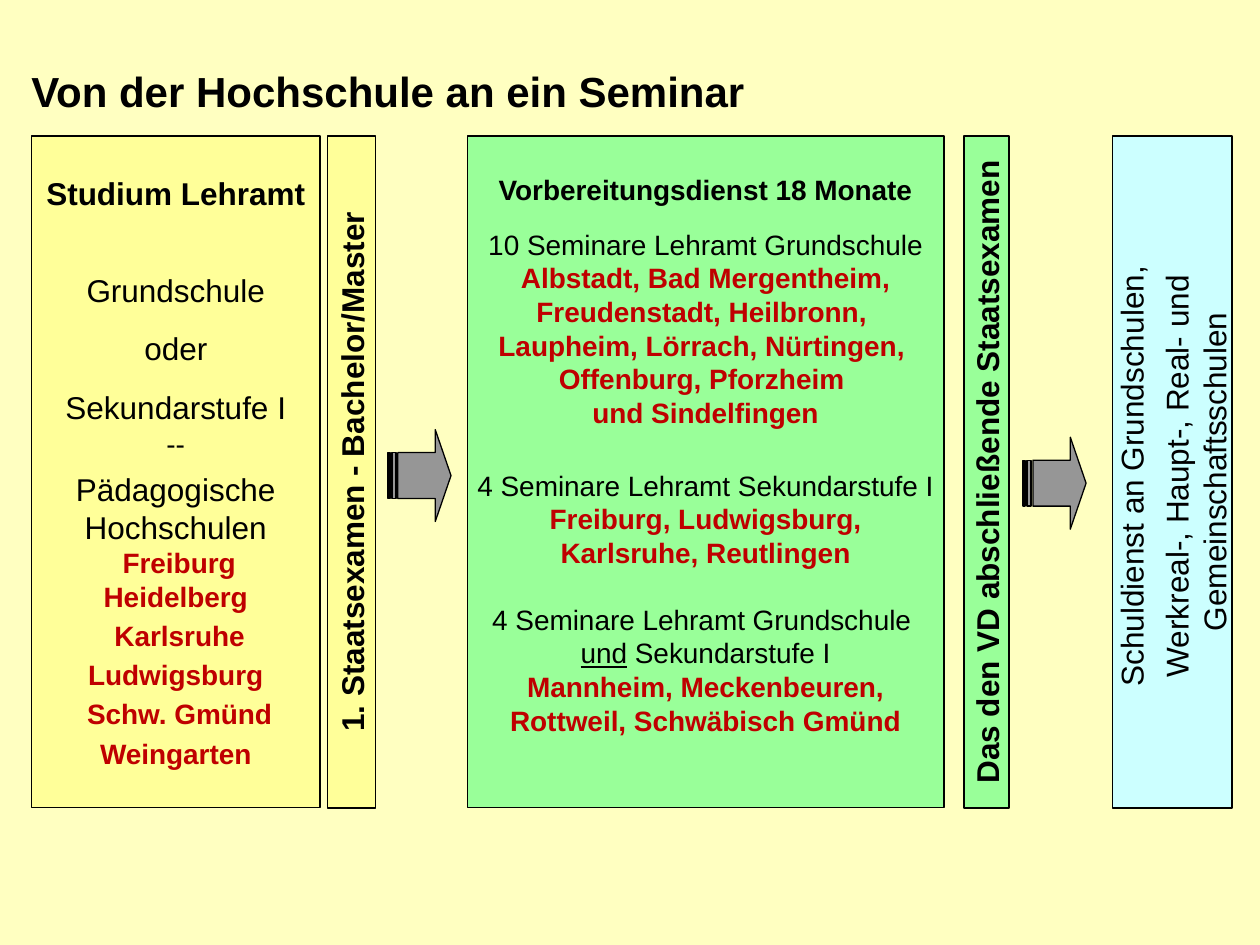
import pptx
import pptx.util
import pptx.dml.color
import pptx.enum.shapes
import pptx.enum.text

Inches, Pt = pptx.util.Inches, pptx.util.Pt
RGBColor = pptx.dml.color.RGBColor
SHAPE = pptx.enum.shapes.MSO_SHAPE
ALIGN = pptx.enum.text.PP_ALIGN
ANCHOR = pptx.enum.text.MSO_ANCHOR

CREAM = RGBColor(0xFF, 0xFF, 0xC1)
YELLOW = RGBColor(0xFF, 0xFF, 0x99)
GREEN = RGBColor(0x99, 0xFF, 0x99)
BLUE = RGBColor(0xCC, 0xFF, 0xFF)
GRAY = RGBColor(0x96, 0x96, 0x96)
BLACK = RGBColor(0, 0, 0)
RED = RGBColor(0xBF, 0, 0)

TOP, TALL = 1.08, 5.33  # shared by all columns
LIST_GAP = 3.2          # 20 % of a 16 pt line


def run(text, size=16, bold=False, color=BLACK, under=False):
    return text, size, bold, color, under


def red(text, size=16):
    return run(text, size, True, RED)


def para(*runs, before=0, after=0):
    return runs, before, after


def write(frame, paras, align=ALIGN.CENTER):
    """Fill a text frame; a newline in a run becomes a line break."""
    frame.word_wrap = False
    for i, (runs, before, after) in enumerate(paras):
        p = frame.add_paragraph() if i else frame.paragraphs[0]
        p.alignment = align
        p.space_before, p.space_after = Pt(before), Pt(after)
        for text, size, bold, color, under in runs:
            for j, line in enumerate(text.split("\n")):
                if j:
                    p.add_line_break()
                if not line:
                    continue
                r = p.add_run()
                r.text = line
                r.font.name, r.font.size = "Arial", Pt(size)
                r.font.bold, r.font.underline = bold, under
                r.font.color.rgb = color


def solid(shapes, kind, box, fill, width):
    shape = shapes.add_shape(kind, *map(Inches, box))
    shape.shadow.inherit = False
    shape.fill.solid()
    shape.fill.fore_color.rgb = fill
    shape.line.color.rgb = BLACK
    shape.line.width = Pt(width)
    return shape


def panel(shapes, box, fill, paras):
    shape = solid(shapes, SHAPE.RECTANGLE, box, fill, 1)
    shape.text_frame.vertical_anchor = ANCHOR.MIDDLE
    write(shape.text_frame, paras)
    return shape


def bar(shapes, box, fill, paras):
    """Column whose text reads upwards: a flat box turned about its centre."""
    x, y, w, h = box
    flat = (x + (w - h) / 2, y + (h - w) / 2, h, w)
    panel(shapes, flat, fill, paras).rotation = 270


def title(shapes, box):
    frame = shapes.add_textbox(*map(Inches, box)).text_frame
    text = run("Von der Hochschule an ein Seminar", 24, True)
    write(frame, [para(text)], ALIGN.LEFT)


def study(shapes, box):
    paras = [
        para(run("Studium Lehramt", 18, True), after=27.6),
        para(run("Grundschule", 18), before=6, after=6),
        para(run("oder", 18), before=6, after=6),
        para(run("Sekundarstufe I\n", 18), run("--"), before=6, after=6),
        para(run("Pädagogische\nHochschulen\n", 18), red(" ", 14), red("Freiburg")),
        para(red("Heidelberg")),
    ]
    for town in (" Karlsruhe", " Ludwigsburg ", " Schw. Gmünd", "Weingarten"):
        paras.append(para(red(town), before=LIST_GAP))
    panel(shapes, box, YELLOW, paras)


def training(shapes, box):
    line = 19.2  # height of one 16 pt line
    shape = panel(shapes, box, GREEN, [
        para(run("Vorbereitungsdienst 18 Monate", bold=True)),
        para(run("10 Seminare Lehramt Grundschule\n"),
             red("Albstadt, Bad Mergentheim,\nFreudenstadt, Heilbronn, \n"
                 "Laupheim, Lörrach, Nürtingen, \nOffenburg, Pforzheim \n"
                 "und Sindelfingen"), before=12),
        para(run("4 Seminare Lehramt Sekundarstufe I"), before=line + LIST_GAP),
        para(red("Freiburg, Ludwigsburg,\nKarlsruhe, Reutlingen")),
        para(run("4 Seminare Lehramt Grundschule \n"), run("und", under=True),
             run(" Sekundarstufe I"), before=line),
        para(red("Mannheim, Meckenbeuren,\nRottweil, Schwäbisch Gmünd")),
    ])
    shape.text_frame.margin_bottom = Inches(0.32)


def school(shapes, box):
    bar(shapes, box, BLUE, [
        para(run("Schuldienst an Grundschulen, ", 18)),
        para(run("Werkreal-, Haupt-, Real- und ", 18), before=4),
        para(run("Gemeinschaftsschulen", 18)),
    ])


def exam(shapes, box, fill, text):
    bar(shapes, box, fill, [para(run(text, 18, True))])


def arrow(shapes, x, y):
    shape = solid(shapes, SHAPE.STRIPED_RIGHT_ARROW, (x, y, 0.5, 0.73), GRAY, 0.75)
    shape.adjustments[0], shape.adjustments[1] = 0.5, 0.25


def main():
    deck = pptx.Presentation()
    deck.slide_width, deck.slide_height = Inches(10), Inches(7.5)
    slide = deck.slides.add_slide(deck.slide_layouts[6])
    slide.background.fill.solid()
    slide.background.fill.fore_color.rgb = CREAM
    shapes = slide.shapes

    # Columns from back to front
    school(shapes, (8.83, TOP, 0.95, TALL))
    group = shapes.add_group_shape().shapes
    study(group, (0.25, TOP, 2.29, TALL))
    exam(group, (2.6, TOP, 0.38, TALL), YELLOW, "1. Staatsexamen - Bachelor/Master")
    exam(shapes, (7.65, TOP, 0.36, TALL), GREEN,
         "Das den VD abschließende Staatsexamen")
    training(shapes, (3.71, TOP, 3.78, TALL))

    # Heading and arrows between the stages
    title(shapes, (0.15, 0.47, 5.91, 0.5))
    arrow(shapes, 3.08, 3.41)
    arrow(shapes, 8.12, 3.47)
    deck.save("out.pptx")


if __name__ == "__main__":
    main()
